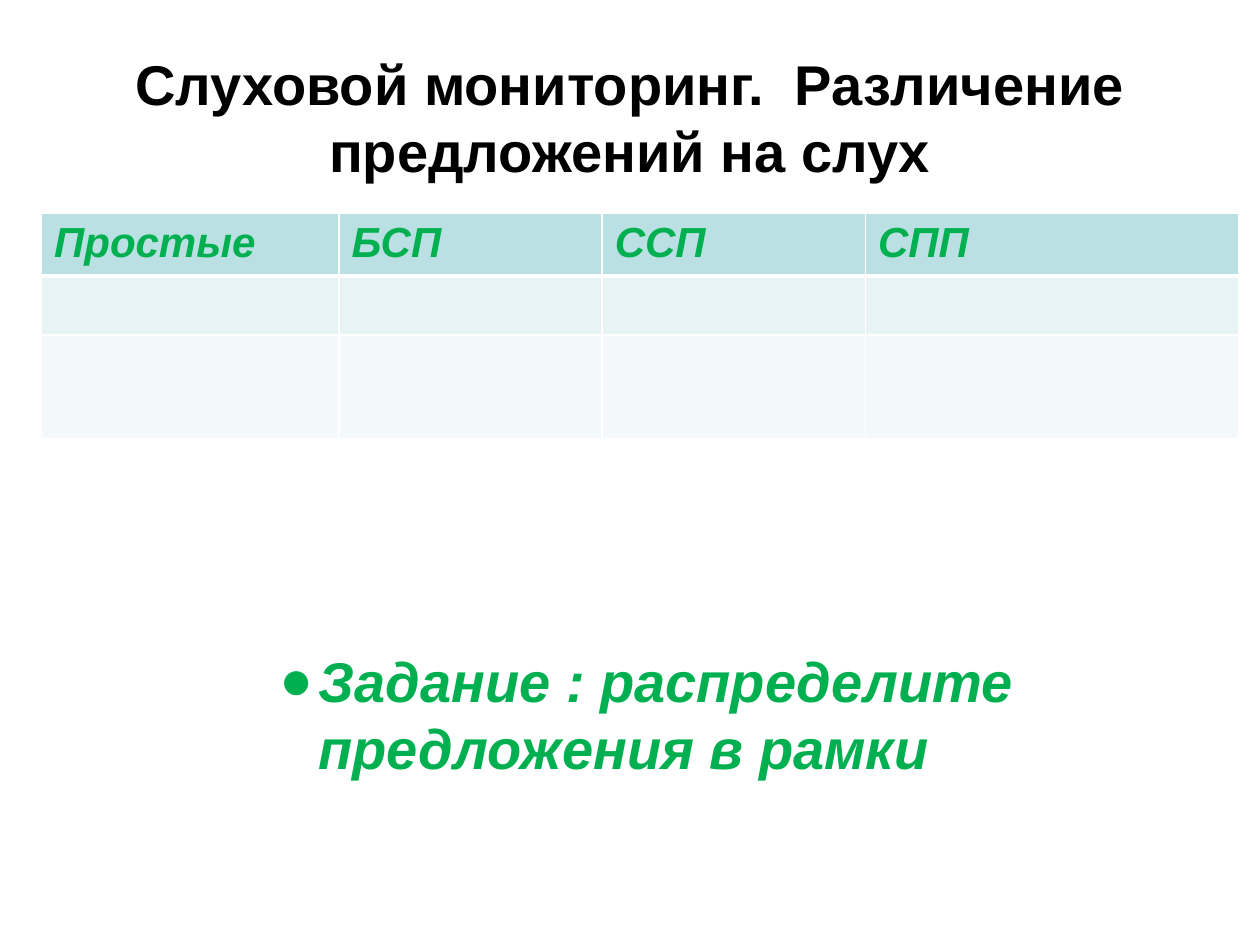
from lxml import etree
from pptx import Presentation
from pptx.dml.color import RGBColor
from pptx.enum.text import MSO_ANCHOR, PP_ALIGN
from pptx.oxml.ns import qn
from pptx.util import Inches, Pt

CENTER, LEFT = PP_ALIGN.CENTER, PP_ALIGN.LEFT
MIDDLE, TOP = MSO_ANCHOR.MIDDLE, MSO_ANCHOR.TOP
BLACK = RGBColor(0x00, 0x00, 0x00)
GREEN = RGBColor(0x00, 0xB0, 0x50)
WHITE = RGBColor(0xFF, 0xFF, 0xFF)
HEADER_TEAL = RGBColor(0xBB, 0xE0, 0xE3)
LIGHT_TEAL = RGBColor(0xE7, 0xF3, 0xF4)
PALE_TEAL = RGBColor(0xF3, 0xF9, 0xFA)


class LessonSlide:
    """Places styled elements on one slide by shares of its size."""

    font_name = "Arial"

    def __init__(self, deck):
        self.width, self.height = deck.slide_width, deck.slide_height
        self.slide = deck.slides.add_slide(deck.slide_layouts[6])

    def area(self, left, top, width, height):
        return (int(left * self.width), int(top * self.height),
                int(width * self.width), int(height * self.height))

    def style(self, paragraph, size, color, italic):
        for run in paragraph.runs:
            font = run.font
            font.name, font.size = self.font_name, Pt(size)
            font.bold, font.italic = True, italic
            font.color.rgb = color

    def text(self, wording, area, color, italic=False, align=LEFT, anchor=TOP, bullet=None):
        frame = self.slide.shapes.add_textbox(*self.area(*area)).text_frame
        frame.word_wrap = True
        frame.vertical_anchor = anchor
        frame.text = wording
        paragraph = frame.paragraphs[0]
        paragraph.alignment = align
        if bullet:
            properties = paragraph._p.get_or_add_pPr()
            properties.set("marL", str(Inches(0.4)))
            properties.set("indent", str(Inches(-0.31)))
            etree.SubElement(properties, qn("a:buFont"), typeface=self.font_name)
            etree.SubElement(properties, qn("a:buChar"), char=bullet)
        self.style(paragraph, 32, color, italic)

    def border(self, cell, side, points):
        line = etree.Element(qn(f"a:ln{side}"), w=str(Pt(points)))
        fill = etree.SubElement(line, qn("a:solidFill"))
        etree.SubElement(fill, qn("a:srgbClr"), val=str(WHITE))
        return line

    def table(self, headings, area, column_shares, row_shares, row_fills):
        grid = self.slide.shapes.add_table(
            len(row_shares), len(headings), *self.area(*area)).table
        for column, share in zip(grid.columns, column_shares):
            column.width = int(share * self.width)
        for index, (row, share, color) in enumerate(zip(grid.rows, row_shares, row_fills)):
            row.height = int(share * self.height)
            for cell, heading in zip(row.cells, headings):
                cell.fill.solid()
                cell.fill.fore_color.rgb = color
                widths = {"L": 1, "R": 1, "T": 3 if index == 1 else 1,
                          "B": 3 if index == 0 else 1}
                properties = cell._tc.get_or_add_tcPr()
                for position, (side, points) in enumerate(widths.items()):
                    properties.insert(position, self.border(cell, side, points))
                if index == 0:
                    cell.text_frame.text = heading
                    self.style(cell.text_frame.paragraphs[0], 24, GREEN, True)


def main():
    deck = Presentation()
    deck.slide_width, deck.slide_height = Inches(10), Inches(7.5)
    lesson = LessonSlide(deck)
    lesson.text("Слуховой мониторинг.  Различение предложений на слух",
                (0.05, 0.04, 0.9, 1 / 6), BLACK, align=CENTER, anchor=MIDDLE)
    columns = (0.236, 0.209, 0.209, 0.296)
    rows = (0.47 / 7.5, 0.47 / 7.5, 0.82 / 7.5)
    lesson.table(("Простые", "БСП", "ССП", "СПП"),
                 (0.033, 1.69 / 7.5, sum(columns), sum(rows)),
                 columns, rows, (HEADER_TEAL, LIGHT_TEAL, PALE_TEAL))
    lesson.text("Задание : распределите предложения в рамки",
                (0.203, 5.08 / 7.5, 0.75, 1.18 / 7.5), GREEN, italic=True, bullet="●")
    deck.save("out.pptx")


if __name__ == "__main__":
    main()
